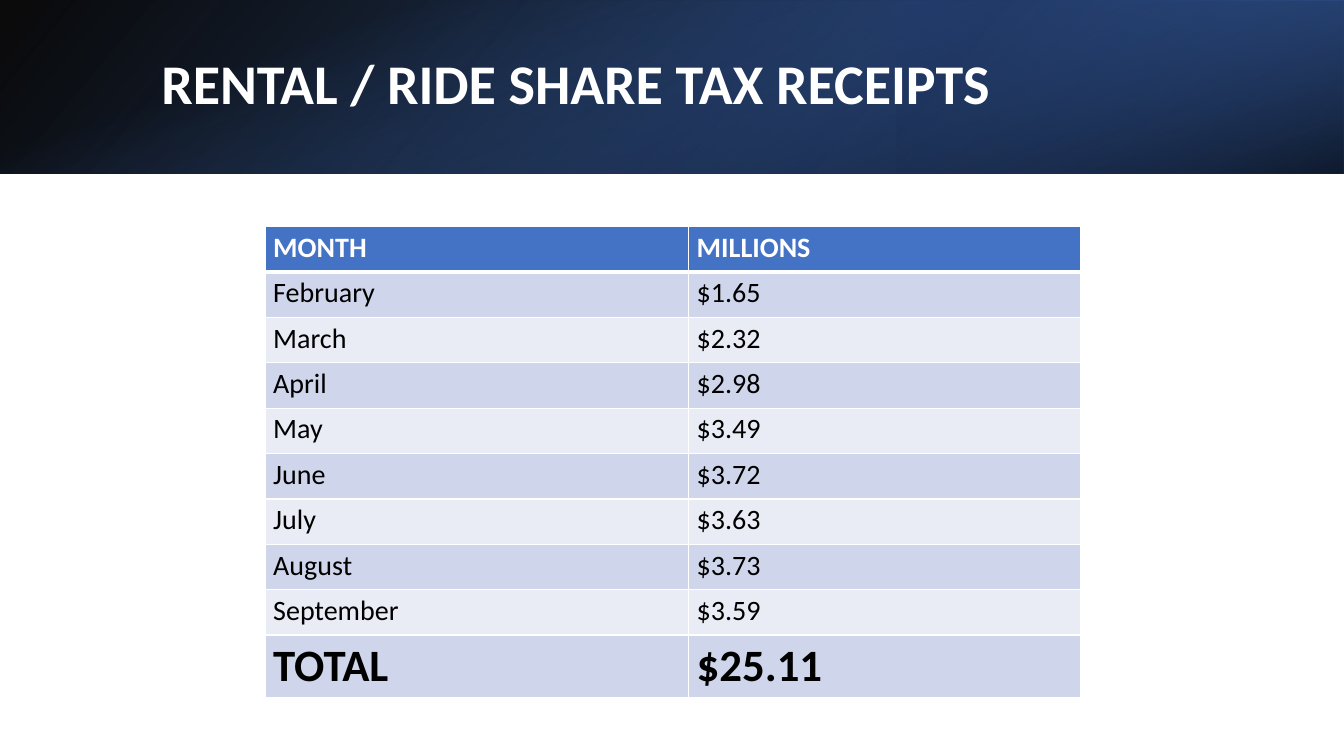
"""Build the rental and ride share tax receipts slide."""
from dataclasses import dataclass

from lxml.etree import SubElement
from pptx import Presentation
from pptx.dml.color import RGBColor
from pptx.enum.shapes import MSO_SHAPE
from pptx.enum.text import MSO_ANCHOR, PP_ALIGN
from pptx.oxml import parse_xml
from pptx.oxml.ns import nsdecls, qn
from pptx.util import Inches, Pt


@dataclass(frozen=True)
class Theme:
    font: str = "Calibri"
    white: str = "FFFFFF"
    black: str = "000000"
    blue: str = "4472C4"
    deep_blue: str = "2F5597"
    navy: str = "203864"
    bands: tuple = ("E9EBF5", "CFD5EA")
    title_size: int = 40
    body_size: int = 20
    total_size: int = 32


theme = Theme()


def add_run(paragraph, text, size, color, bold):
    run = paragraph.add_run()
    run.text = text
    run.font.name = theme.font
    run.font.size = Pt(size)
    run.font.bold = bold
    run.font.color.rgb = RGBColor.from_string(color)


def gradient(stops, angle):
    stop_xml = "".join(
        f'<a:gs pos="{position * 1000}"><a:srgbClr val="{color}">'
        f'<a:alpha val="{opacity * 1000}"/></a:srgbClr></a:gs>'
        for position, color, opacity in stops
    )
    return parse_xml(
        f'<a:gradFill rotWithShape="1" {nsdecls("a")}><a:gsLst>{stop_xml}</a:gsLst>'
        f'<a:lin ang="{angle * 60000}" scaled="0"/></a:gradFill>'
    )


prs = Presentation()
prs.slide_width, prs.slide_height = Inches(13.33), Inches(7.5)
slide = prs.slides.add_slide(prs.slide_layouts[5])

header_layers = [
    ((0, 0, 13.33, 1.72), 0, True,
     [(0, theme.black, 96), (100, theme.deep_blue, 100)], 140),
    ((8.89, 0, 4.44, 1.72), 180, True,
     [(19, theme.navy, 68), (100, theme.blue, 79)], 320),
    ((5.8, -5.8, 1.72, 13.33), 90, False,
     [(23, theme.blue, 0), (99, theme.black, 74)], 340),
]
for box, rotation, flipped, stops, angle in header_layers:
    layer = slide.shapes.add_shape(MSO_SHAPE.RECTANGLE, *map(Inches, box))
    layer.rotation = rotation
    layer.shadow.inherit = False
    layer.line.fill.background()
    properties = layer._element.spPr
    if flipped:
        properties.find(qn("a:xfrm")).set("flipH", "1")
    properties.find(qn("a:prstGeom")).addnext(gradient(stops, angle))

title = slide.shapes.title
slide.shapes._spTree.append(title._element)
title.left, title.top = Inches(1.5), Inches(0.38)
title.width, title.height = Inches(10.98), Inches(0.96)
title.text_frame.word_wrap = True
title.text_frame.vertical_anchor = MSO_ANCHOR.MIDDLE
heading = title.text_frame.paragraphs[0]
heading.alignment = PP_ALIGN.LEFT
heading.line_spacing = 0.9
add_run(heading, "RENTAL / RIDE SHARE TAX RECEIPTS", theme.title_size, theme.white, True)

receipts = [
    ("MONTH", "MILLIONS"),
    ("February", "$1.65"),
    ("March", "$2.32"),
    ("April", "$2.98"),
    ("May", "$3.49"),
    ("June", "$3.72"),
    ("July", "$3.63"),
    ("August", "$3.73"),
    ("September", "$3.59"),
    ("TOTAL", "$25.11"),
]
last = len(receipts) - 1
table = slide.shapes.add_table(
    len(receipts), 2, Inches(2.63), Inches(2.25), Inches(8.09), Inches(4.69)
).table
table.columns[0].width, table.columns[1].width = Inches(4.2), Inches(3.89)

for row, values in enumerate(receipts):
    is_header, is_total = row == 0, row == last
    table.rows[row].height = Inches(0.62 if is_total else 0.45)
    size = theme.total_size if is_total else theme.body_size
    color = theme.white if is_header else theme.black
    background = theme.blue if is_header else theme.bands[row % 2]
    for column, value in enumerate(values):
        cell = table.cell(row, column)
        cell.margin_left = cell.margin_right = Inches(0.08)
        cell.margin_top = cell.margin_bottom = Inches(0.04)
        borders = {"lnL": 1, "lnR": 1, "lnT": 3 if row == 1 else 1, "lnB": 3 if is_header else 1}
        for side, width in borders.items():
            border = SubElement(cell._tc.get_or_add_tcPr(), qn(f"a:{side}"), w=str(Pt(width)))
            border_fill = SubElement(border, qn("a:solidFill"))
            SubElement(border_fill, qn("a:srgbClr"), val=theme.white)
        cell.fill.solid()
        cell.fill.fore_color.rgb = RGBColor.from_string(background)
        add_run(cell.text_frame.paragraphs[0], value, size, color, is_header or is_total)

prs.save("out.pptx")
